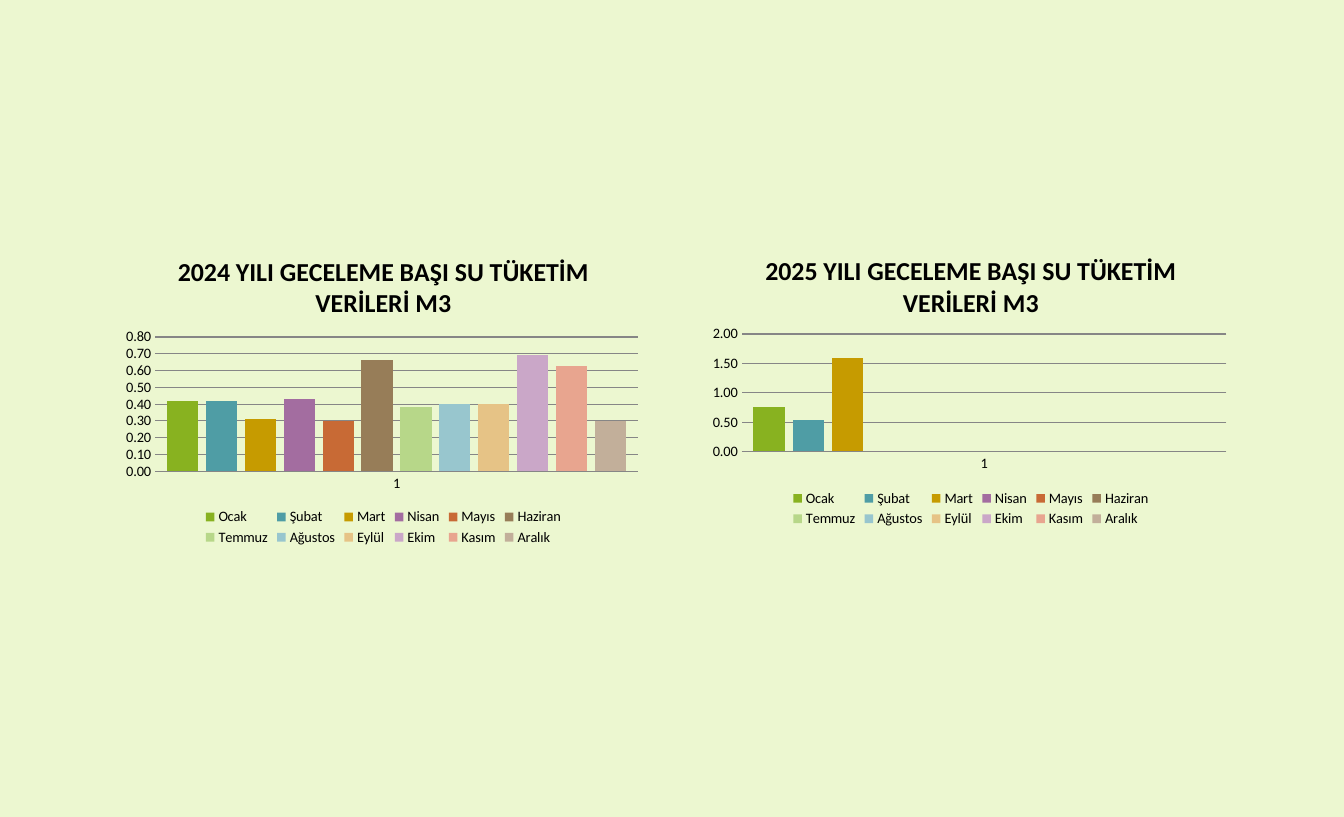
from lxml.etree import SubElement
from pptx import Presentation
from pptx.chart.data import CategoryChartData as ChartData
from pptx.dml.color import RGBColor
from pptx.enum.chart import XL_CHART_TYPE as Kind, XL_LEGEND_POSITION as Side
from pptx.enum.chart import XL_TICK_MARK as Tick
from pptx.oxml.ns import qn
from pptx.util import Pt

MONTHS = ["Ocak", "Şubat", "Mart", "Nisan", "Mayıs", "Haziran", "Temmuz",
          "Ağustos", "Eylül", "Ekim", "Kasım", "Aralık"]
FILLS = ["88B220", "4F9DA5", "C69B00", "A36DA0", "C86A35", "977D58",
         "B7D789", "98C6CE", "E6C386", "CAA7C8", "E8A58F", "C2AF9A"]
GRID = "868686"

# year, left, width, height, axis top, axis step, plot area, monthly values
CHARTS = [
    (2025, 490.3, 370.8, 204.5, 2, 0.5,
     {"x": 0.07, "y": 0.33, "w": 0.91, "h": 0.4},
     [0.76, 0.54, 1.59, 0] + [None] * 8),
    (2024, 82.1, 369.4, 217.4, 0.8, 0.1,
     {"x": 0.07, "y": 0.32, "w": 0.91, "h": 0.43},
     [0.42, 0.42, 0.31, 0.43, 0.3, 0.66, 0.38, 0.4, 0.4, 0.69, 0.63, 0.3]),
]


def paint(fill, color):
    fill.solid()
    fill.fore_color.rgb = RGBColor.from_string(color)


def style(font, size, bold):
    font.name = "Calibri"
    font.size = Pt(size)
    font.bold = bold
    paint(font.fill, "000000")


deck = Presentation()
deck.slide_width, deck.slide_height = Pt(935.43), Pt(568.35)
slide = deck.slides.add_slide(deck.slide_layouts[6])
paint(slide.background.fill, "ECF7D0")

for year, left, width, height, top, step, area, usage in CHARTS:
    data = ChartData(number_format="0.00")
    data.categories = ["1"]
    for month, value in zip(MONTHS, usage):
        data.add_series(month, [value])
    chart = slide.shapes.add_chart(Kind.COLUMN_CLUSTERED, Pt(left), Pt(164.9),
                                   Pt(width), Pt(height), data).chart
    style(chart.font, 10, False)

    title = chart.chart_title.text_frame
    title.text = f"{year} YILI GECELEME BAŞI SU TÜKETİM VERİLERİ M3"
    style(title.paragraphs[0].runs[0].font, 18, True)
    chart.chart_title.include_in_layout = False

    chart.has_legend = True
    chart.legend.position = Side.BOTTOM
    chart.legend.include_in_layout = False

    plot = chart.plots[0]
    plot.vary_by_categories = False
    plot.gap_width, plot.overlap = 75, -25
    for series, color in zip(plot.series, FILLS):
        paint(series.format.fill, color)
        series.invert_if_negative = False

    months, scale = chart.category_axis, chart.value_axis
    for axis in (months, scale):
        axis.major_tick_mark = axis.minor_tick_mark = Tick.NONE
    scale.minimum_scale, scale.maximum_scale = 0, top
    scale.major_unit = step
    scale.tick_labels.number_format = "0.00"
    scale.tick_labels.number_format_is_linked = False
    scale.format.line.fill.background()
    for line in (months.format.line, scale.major_gridlines.format.line):
        paint(line.fill, GRID)
        line.width = Pt(0.75)

    frame = chart.element.find(".//" + qn("c:plotArea"))
    for old in frame.findall(qn("c:layout")):
        frame.remove(old)
    layout = SubElement(frame, qn("c:layout"))
    frame.insert(0, layout)
    manual = SubElement(layout, qn("c:manualLayout"))
    rules = {"layoutTarget": "inner", "xMode": "edge", "yMode": "edge"}
    for tag, value in (rules | area).items():
        SubElement(manual, qn("c:" + tag)).set("val", str(value))

deck.save("out.pptx")
